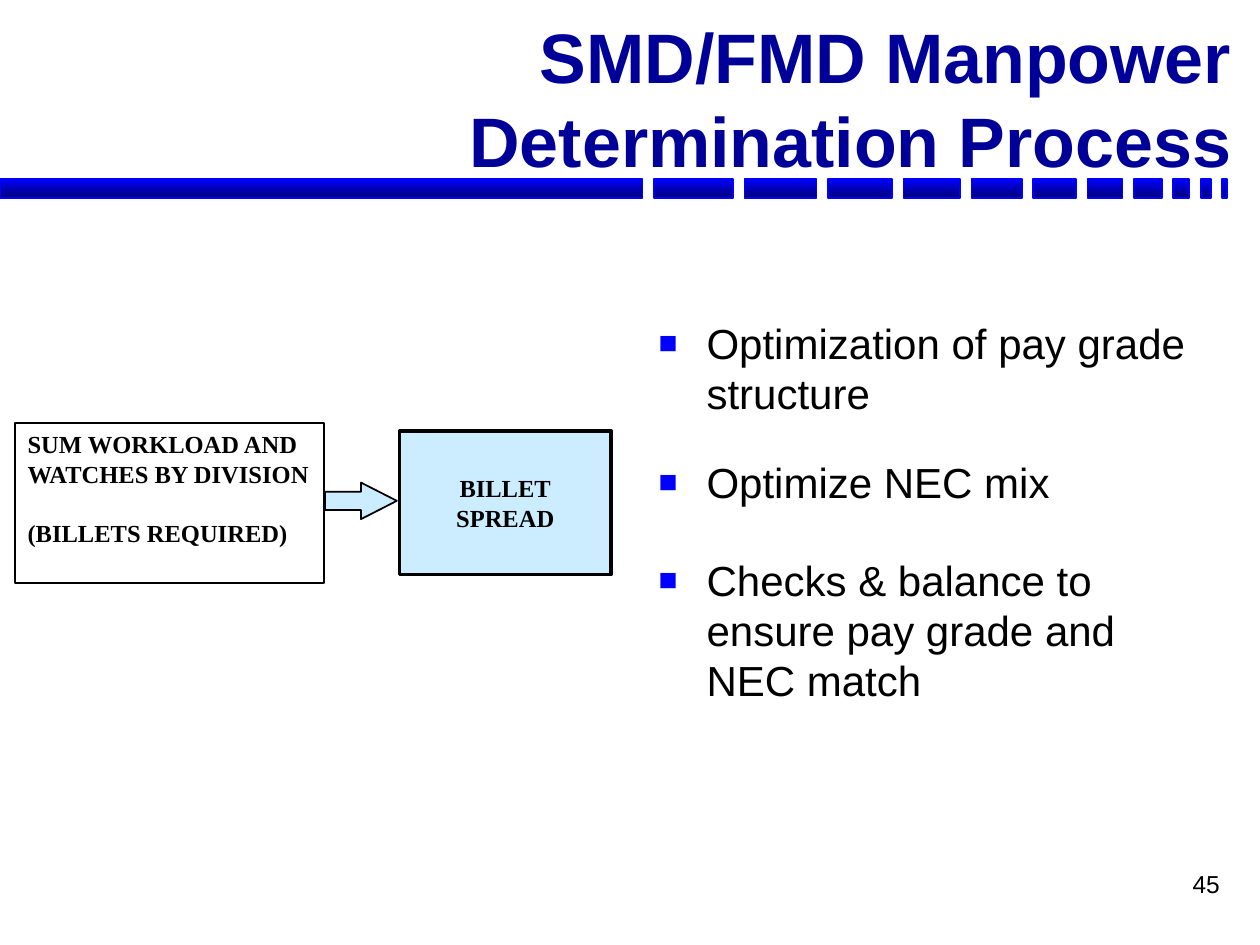
from lxml import etree
from pptx import Presentation
from pptx import util as u
from pptx.dml.color import RGBColor
from pptx.enum import shapes, text
from pptx.oxml import ns

BLUE = RGBColor(0x00, 0x00, 0xFF)
DARK_BLUE = RGBColor(0x00, 0x00, 0x76)
TITLE_BLUE = RGBColor(0x00, 0x00, 0x99)
PALE_BLUE = RGBColor(0xCC, 0xEC, 0xFF)
BLACK = RGBColor(0x00, 0x00, 0x00)

presentation = Presentation()
presentation.slide_width = u.Inches(10)
presentation.slide_height = u.Inches(7.5)
slide = presentation.slides.add_slide(presentation.slide_layouts[6])

# The grid has 100 columns and 75 rows, so its cells are square.
COLUMN = presentation.slide_width / 100
ROW = presentation.slide_height / 75


def add_box(preset, left, top, width, height, fill=None, line=None, line_width=1):
    """Add a preset shape, or a text box when preset is None, in grid units."""
    area = [round(n) for n in (left * COLUMN, top * ROW, width * COLUMN, height * ROW)]
    if preset is None:
        box = slide.shapes.add_textbox(*area)
    else:
        box = slide.shapes.add_shape(preset, *area)
        box.shadow.inherit = False
        if fill is None:
            box.fill.background()
        else:
            box.fill.solid()
            box.fill.fore_color.rgb = fill
        box.line.color.rgb = line
        box.line.width = u.Pt(line_width)
    box.text_frame.word_wrap = True
    return box


def write(box, lines, size, font_name="Arial", color=BLACK, bold=False,
          align=text.PP_ALIGN.LEFT, anchor=text.MSO_ANCHOR.TOP, gaps=(), bullet=False):
    """Write one paragraph per line; gaps holds the space before each, in points."""
    frame = box.text_frame
    frame.vertical_anchor = anchor
    for index, line in enumerate(lines):
        paragraph = frame.add_paragraph() if index else frame.paragraphs[0]
        paragraph.text = line
        paragraph.alignment = align
        if gaps and gaps[index]:
            paragraph.space_before = u.Pt(gaps[index])
        if bullet:
            properties = paragraph._p.get_or_add_pPr()
            properties.set("marL", str(u.Inches(0.38)))
            properties.set("indent", str(-u.Inches(0.38)))
            bullet_color = etree.SubElement(properties, ns.qn("a:buClr"))
            etree.SubElement(bullet_color, ns.qn("a:srgbClr"), val=str(BLUE))
            etree.SubElement(properties, ns.qn("a:buSzPct"), val="75000")
            etree.SubElement(properties, ns.qn("a:buFont"), typeface="Arial")
            etree.SubElement(properties, ns.qn("a:buChar"), char="■")
        paragraph.font.size = u.Pt(size)
        paragraph.font.name = font_name
        paragraph.font.bold = bold
        paragraph.font.color.rgb = color


# Rule under the title: bars that shrink to the right, with equal gaps
BAR_WIDTHS = [51, 6.3, 5.7, 5.1, 4.5, 4, 3.4, 2.8, 2.2, 1.3, 0.8, 0.4]
BAR_GAP = 0.9
left = 0
for width in BAR_WIDTHS:
    bar = add_box(shapes.MSO_SHAPE.RECTANGLE, left, 14.2, width, 1.5, BLUE, BLUE)
    bar.fill.gradient()
    bar.fill.gradient_angle = 270
    for stop, color, position in zip(bar.fill.gradient_stops, (BLUE, DARK_BLUE), (0, 1)):
        stop.color.rgb = color
        stop.position = position
    left += width + BAR_GAP

title = add_box(None, 13.3, 3.9, 85.4, 11)
write(title, ["SMD/FMD Manpower Determination Process"], 40, color=TITLE_BLUE, bold=True,
      align=text.PP_ALIGN.RIGHT, anchor=text.MSO_ANCHOR.BOTTOM)

points = add_box(None, 51.3, 24.7, 45.3, 42.5)
write(points, ["Optimization of pay grade structure", "Optimize NEC mix",
               "Checks & balance to ensure pay grade and NEC match"],
      24, gaps=(0, 21.6, 27.2), bullet=True)

billet_spread = add_box(shapes.MSO_SHAPE.RECTANGLE, 31.7, 34.2, 16.8, 11.4,
                        PALE_BLUE, BLACK, 2)
billet_spread.text_frame.word_wrap = False
write(billet_spread, ["BILLET", "SPREAD"], 14, "Times New Roman", bold=True,
      align=text.PP_ALIGN.CENTER, anchor=text.MSO_ANCHOR.MIDDLE)

workload = add_box(shapes.MSO_SHAPE.RECTANGLE, 1.2, 33.6, 24.5, 12.7, line=BLACK)
write(workload, ["SUM WORKLOAD AND WATCHES BY DIVISION", "(BILLETS REQUIRED)"],
      14, "Times New Roman", bold=True, gaps=(0, 16.8))

arrow = add_box(shapes.MSO_SHAPE.RIGHT_ARROW, 25.8, 38.3, 5.7, 2.9, PALE_BLUE, BLACK)
arrow.adjustments[0] = 0.5
arrow.adjustments[1] = 0.98

page_number = add_box(None, 77, 68.5, 20.8, 5)
write(page_number, ["45"], 14, align=text.PP_ALIGN.RIGHT)

presentation.save("out.pptx")
